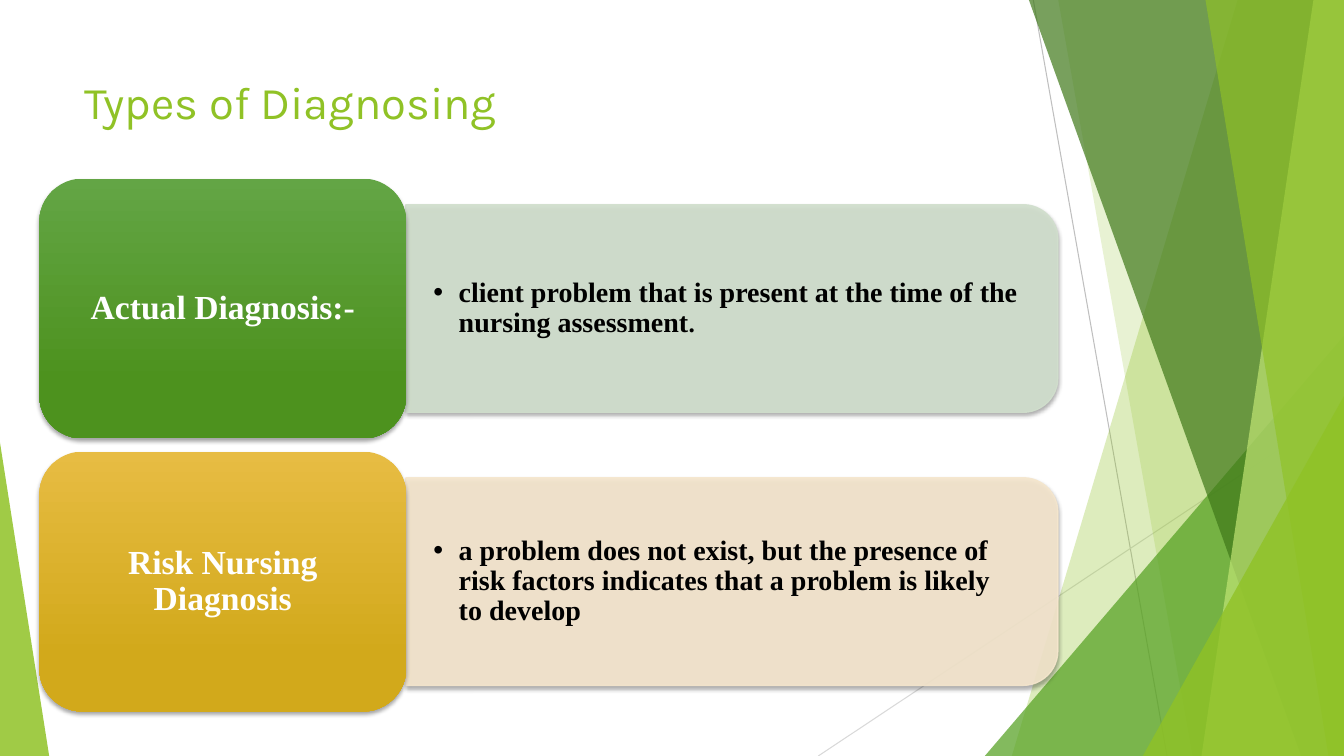
from lxml.etree import SubElement
from pptx import Presentation
from pptx.dml.color import RGBColor
from pptx.enum.shapes import MSO_CONNECTOR, MSO_SHAPE
from pptx.enum.text import MSO_ANCHOR, MSO_AUTO_SIZE, PP_ALIGN
from pptx.oxml.ns import qn
from pptx.util import Cm, Pt

LIME = RGBColor(0x90, 0xC2, 0x26)
GREEN = RGBColor(0x54, 0xA0, 0x21)
DARK_GREEN = RGBColor(0x3F, 0x78, 0x19)
PALE_LIME = RGBColor(0xC0, 0xE4, 0x74)
SAGE = RGBColor(0xD1, 0xDF, 0xCD)
SAND = RGBColor(0xF5, 0xE6, 0xCD)
CARD_GREEN = (RGBColor(0x63, 0xA5, 0x45), RGBColor(0x4D, 0x92, 0x1E))
CARD_GOLD = (RGBColor(0xE7, 0xBC, 0x43), RGBColor(0xD2, 0xA9, 0x1B))
GREY = RGBColor(0xBF, 0xBF, 0xBF)
LIGHT_GREY = RGBColor(0xD9, 0xD9, 0xD9)
BLACK = RGBColor(0, 0, 0)
WHITE = RGBColor(255, 255, 255)

WIDTH, HEIGHT = 33.87, 19.05


def paint(shape, color, opacity, outlined=False):
    shape.shadow.inherit = False
    shape.fill.solid()
    shape.fill.fore_color.rgb = color
    if outlined:
        shape.line.color.rgb = color
        shape.line.width = Pt(1)
    else:
        shape.line.fill.background()
    for element in shape.element.spPr.iter(qn("a:srgbClr")):
        SubElement(element, qn("a:alpha"), val=str(opacity * 1000))


def add_shadow(shape):
    shape.shadow.inherit = False
    effects = shape.element.spPr.find(qn("a:effectLst"))
    shadow = SubElement(effects, qn("a:outerShdw"), blurRad=str(Pt(3)),
                        dist=str(Pt(2)), dir="5400000", rotWithShape="0")
    color = SubElement(shadow, qn("a:srgbClr"), val="000000")
    SubElement(color, qn("a:alpha"), val="35000")


presentation = Presentation()
presentation.slide_width = Cm(WIDTH)
presentation.slide_height = Cm(HEIGHT)
slide = presentation.slides.add_slide(presentation.slide_layouts[3])
shapes = slide.shapes

for x1, y1, x2, y2, color in [
    (26.04, 0, 29.41, HEIGHT, GREY),
    (WIDTH, 10.24, 20.62, HEIGHT, LIGHT_GREY),
]:
    line = shapes.add_connector(MSO_CONNECTOR.STRAIGHT, Cm(x1), Cm(y1), Cm(x2), Cm(y2))
    line.line.color.rgb = color
    line.line.width = Pt(0.75)
    SubElement(line.element.spPr, qn("a:effectLst"))

for top, top_left, bottom_left, color, opacity in [
    (0, 31.19, 25.5, LIME, 30),
    (0, 26.67, 30.05, LIME, 20),
    (8.46, WIDTH, 24.82, GREEN, 72),
    (0, 25.93, 32.79, DARK_GREEN, 70),
    (0, 33.1, 30.28, PALE_LIME, 70),
    (0, 30.38, 33.48, LIME, 65),
    (9.98, WIDTH, 28.8, LIME, 80),
]:
    if top_left == WIDTH:
        facet = shapes.add_shape(MSO_SHAPE.ISOSCELES_TRIANGLE, Cm(bottom_left), Cm(top),
                                 Cm(WIDTH - bottom_left), Cm(HEIGHT - top))
        facet.adjustments[0] = 1
    else:
        builder = shapes.build_freeform(Cm(top_left), Cm(top))
        builder.add_line_segments([(Cm(WIDTH), Cm(top)), (Cm(WIDTH), Cm(HEIGHT)),
                                   (Cm(bottom_left), Cm(HEIGHT))])
        facet = builder.convert_to_shape()
    paint(facet, color, opacity)

corner = shapes.add_shape(MSO_SHAPE.ISOSCELES_TRIANGLE, 0, Cm(11.15), Cm(1.24), Cm(7.9))
corner.adjustments[0] = 0
paint(corner, LIME, 85)

title = shapes.title
title.left, title.top, title.width, title.height = Cm(1.88), Cm(1.7), Cm(23.88), Cm(1.73)
title.text_frame.text = "Types of Diagnosing"
title.text_frame.auto_size = MSO_AUTO_SIZE.NONE
title.text_frame.vertical_anchor = MSO_ANCHOR.MIDDLE
paragraph = title.text_frame.paragraphs[0]
paragraph.alignment = PP_ALIGN.LEFT
paragraph.font.name = "Karla"
paragraph.font.size = Pt(32.4)
paragraph.font.color.rgb = LIME

CARD_LEFT, CARD_TOP, CARD_WIDTH, CARD_HEIGHT, ROW_STEP = 0.99, 4.5, 9.25, 6.55, 6.88
PANEL_LEFT, PANEL_LENGTH, PANEL_HEIGHT = 10.23, 16.43, 5.23
TEXT_WIDTH, TEXT_HEIGHT = 16.18, 4.72

diagnoses = [
    ("Actual Diagnosis:-", CARD_GREEN, SAGE,
     [("client problem that is present at the time of the nursing assessment", 20), (".", 18)]),
    ("Risk Nursing Diagnosis", CARD_GOLD, SAND,
     [("a problem does not exist, but the presence of risk factors indicates "
       "that a problem is likely to develop", 20)]),
]
for row, (name, gradient, panel_color, description) in enumerate(diagnoses):
    top = CARD_TOP + row * ROW_STEP
    middle = top + CARD_HEIGHT / 2

    panel = shapes.add_shape(
        MSO_SHAPE.ROUND_2_SAME_RECTANGLE,
        Cm(PANEL_LEFT + (PANEL_LENGTH - PANEL_HEIGHT) / 2), Cm(middle - PANEL_LENGTH / 2),
        Cm(PANEL_HEIGHT), Cm(PANEL_LENGTH))
    panel.rotation = 90
    paint(panel, panel_color, 90, outlined=True)
    add_shadow(panel)

    body = slide.placeholders[row + 1]
    body.left, body.top = Cm(PANEL_LEFT), Cm(middle - TEXT_HEIGHT / 2)
    body.width, body.height = Cm(TEXT_WIDTH), Cm(TEXT_HEIGHT)
    panel.element.addnext(body.element)
    frame = body.text_frame
    frame.auto_size = MSO_AUTO_SIZE.NONE
    frame.vertical_anchor = MSO_ANCHOR.MIDDLE
    frame.margin_left = frame.margin_right = Cm(0.69)
    frame.margin_top = frame.margin_bottom = Cm(0.36)
    paragraph = frame.paragraphs[0]
    paragraph.line_spacing = 0.9
    paragraph.space_before = Pt(0)
    properties = paragraph._p.get_or_add_pPr()
    properties.set("marL", str(Cm(0.64)))
    properties.set("indent", str(-Cm(0.64)))
    SubElement(properties, qn("a:buChar"), char="•")
    paragraph.font.name = "Times New Roman"
    paragraph.font.bold = True
    paragraph.font.color.rgb = BLACK
    for text, size in description:
        run = paragraph.add_run()
        run.text = text
        run.font.size = Pt(size)

    card = shapes.add_shape(MSO_SHAPE.ROUNDED_RECTANGLE, Cm(CARD_LEFT), Cm(top),
                            Cm(CARD_WIDTH), Cm(CARD_HEIGHT))
    card.fill.gradient()
    card.fill.gradient_angle = 270
    for stop, position, color in zip(card.fill.gradient_stops, (0, 0.78), gradient):
        stop.position = position
        stop.color.rgb = color
    card.line.fill.background()
    add_shadow(card)
    card.text_frame.text = name
    card.text_frame.word_wrap = True
    card.text_frame.vertical_anchor = MSO_ANCHOR.MIDDLE
    paragraph = card.text_frame.paragraphs[0]
    paragraph.alignment = PP_ALIGN.CENTER
    paragraph.line_spacing = 0.9
    paragraph.font.name = "Times New Roman"
    paragraph.font.size = Pt(24)
    paragraph.font.bold = True
    paragraph.font.color.rgb = WHITE

presentation.save("out.pptx")
